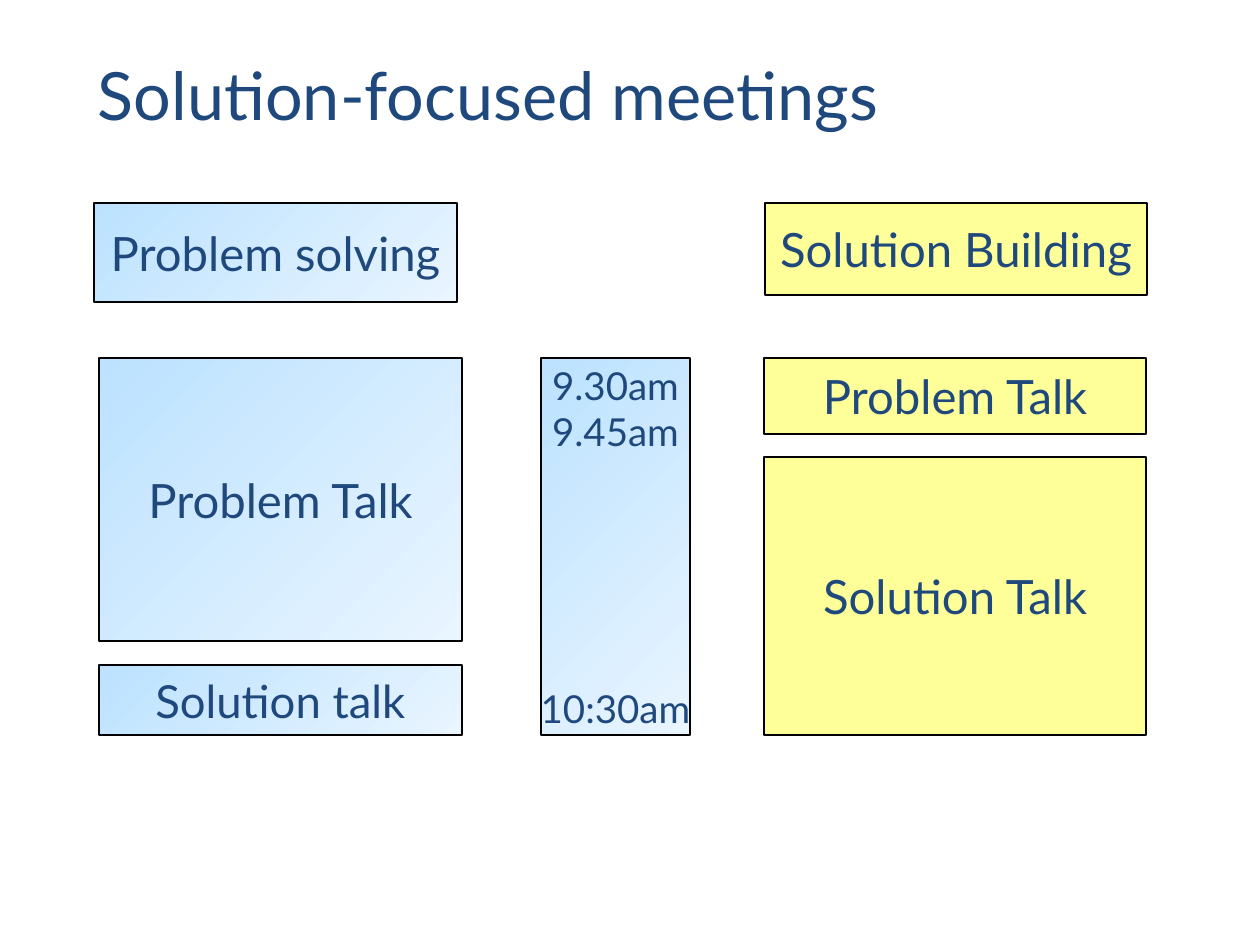
from dataclasses import dataclass

from pptx import Presentation
from pptx import util as u
from pptx.dml.color import RGBColor
from pptx.enum import shapes, text

PX_PER_INCH = 126
FONT = "Lato"
COLORS = {
    "ink": "1F497D",
    "outline": "000000",
    "blue_start": "BCE2FF",
    "blue_end": "E9F5FF",
    "yellow": "FFFF99",
}

# Shared edges of the two columns, in px
BODY_TOP, BODY_BOTTOM = 358, 735
LEFT_X, LEFT_W = 99, 363
RIGHT_X, RIGHT_W = 764, 382


@dataclass(frozen=True)
class Box:
    label: str
    x: int
    y: int
    w: int
    h: int
    solution_side: bool = False
    size: int = 27
    border: float = 0.75


def px(n: int) -> u.Emu:
    return u.Emu(round(n * u.Inches(1) / PX_PER_INCH))


def rgb(name: str) -> RGBColor:
    return RGBColor.from_string(COLORS[name])


def set_text(tf, label: str, size: int) -> None:
    tf.text = label
    for p in tf.paragraphs:
        p.alignment = text.PP_ALIGN.CENTER
        for r in p.runs:
            r.font.name = FONT
            r.font.size = u.Pt(size)
            r.font.color.rgb = rgb("ink")


def fill_blue(s) -> None:
    s.fill.gradient()
    s.fill.gradient_angle = 315
    for stop, name in zip(s.fill.gradient_stops, ("blue_start", "blue_end")):
        stop.color.rgb = rgb(name)


def draw_box(sp, box: Box):
    s = sp.add_shape(shapes.MSO_SHAPE.RECTANGLE, *map(px, (box.x, box.y, box.w, box.h)))
    s.shadow.inherit = False
    if box.solution_side:
        s.fill.solid()
        s.fill.fore_color.rgb = rgb("yellow")
    else:
        fill_blue(s)
    s.line.color.rgb = rgb("outline")
    s.line.width = u.Pt(box.border)
    tf = s.text_frame
    tf.word_wrap = False
    tf.vertical_anchor = text.MSO_ANCHOR.MIDDLE
    set_text(tf, box.label, box.size)
    return s


def draw_title(sp, label: str) -> None:
    tf = sp.add_textbox(*map(px, (-84, 48, 1134, 117))).text_frame
    tf.word_wrap = True
    tf.margin_left = px(23)
    set_text(tf, label, 38)


def draw_timeline(sp) -> None:
    size, gap_lines, line_height = 22, 5, 1.2
    s = draw_box(sp, Box("9.30am\n9.45am\n10:30am", 541, BODY_TOP, 149,
                         BODY_BOTTOM - BODY_TOP, size=size))
    s.text_frame.paragraphs[-1].space_before = u.Pt(gap_lines * line_height * size)


BOXES = [
    Box("Problem solving", 94, 203, LEFT_W, 99, border=1.25),
    Box("Solution Building", 765, 203, RIGHT_W, 92, True, border=1.25),
    Box("Problem Talk", LEFT_X, BODY_TOP, LEFT_W, 283),
    Box("Solution talk", LEFT_X, 665, LEFT_W, BODY_BOTTOM - 665, size=26),
    Box("Problem Talk", RIGHT_X, BODY_TOP, RIGHT_W, 76, True),
    Box("Solution Talk", RIGHT_X, 457, RIGHT_W, BODY_BOTTOM - 457, True),
]


def main() -> None:
    prs = Presentation()
    prs.slide_width, prs.slide_height = px(1260), px(945)
    sp = prs.slides.add_slide(prs.slide_layouts[6]).shapes
    draw_title(sp, "Solution-focused meetings")
    for box in BOXES:
        draw_box(sp, box)
    draw_timeline(sp)
    prs.save("out.pptx")


if __name__ == "__main__":
    main()
